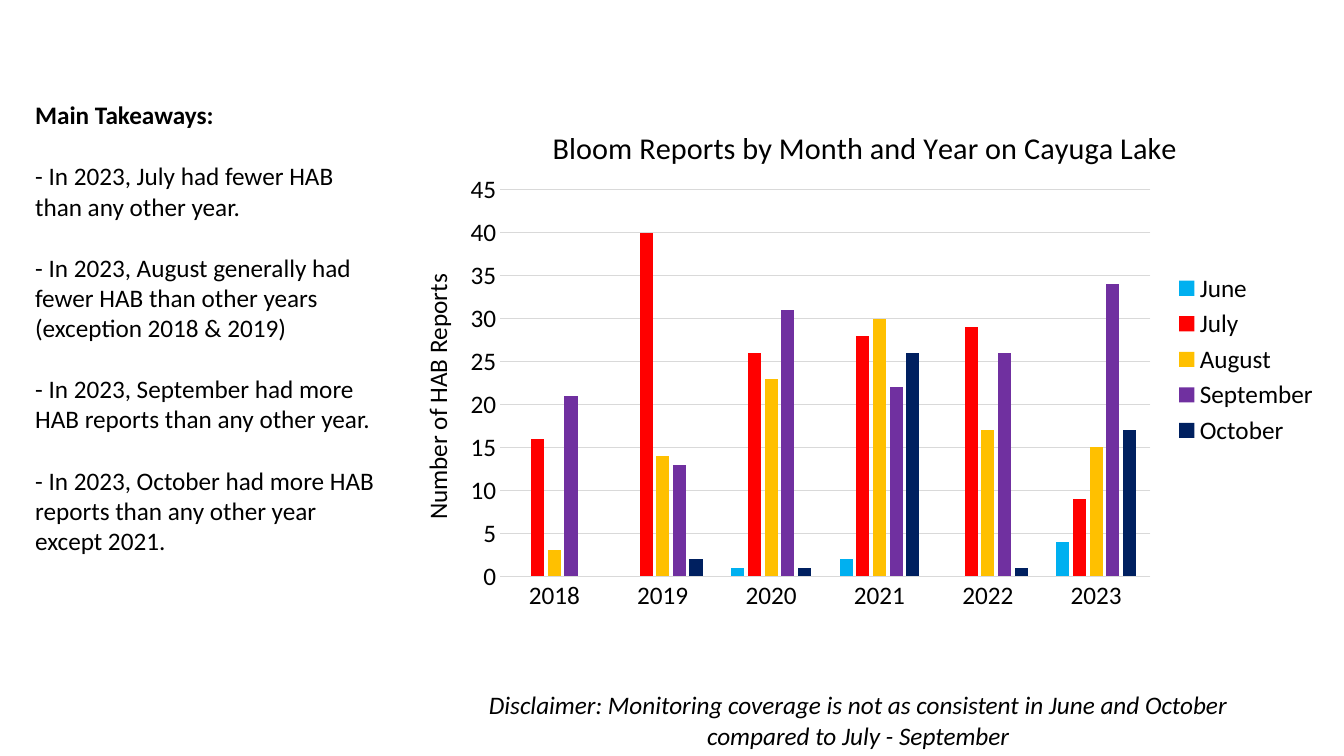
import pptx
import pptx.chart.data
import pptx.dml.color
import pptx.enum.chart
import pptx.enum.text
import pptx.oxml
import pptx.oxml.ns
import pptx.util

Pt = pptx.util.Pt
RGBColor = pptx.dml.color.RGBColor

BLACK = RGBColor(0x00, 0x00, 0x00)
GRID_GREY = RGBColor(0xD9, 0xD9, 0xD9)
JUNE_BLUE = RGBColor(0x00, 0xB0, 0xF0)
JULY_RED = RGBColor(0xFF, 0x00, 0x00)
AUGUST_GOLD = RGBColor(0xFF, 0xC0, 0x00)
SEPTEMBER_PURPLE = RGBColor(0x70, 0x30, 0xA0)
OCTOBER_NAVY = RGBColor(0x00, 0x20, 0x60)

YEARS = ["2018", "2019", "2020", "2021", "2022", "2023"]
MONTHS = [
    ("June", [None, None, 1, 2, None, 4], JUNE_BLUE),
    ("July", [16, 40, 26, 28, 29, 9], JULY_RED),
    ("August", [3, 14, 23, 30, 17, 15], AUGUST_GOLD),
    ("September", [21, 13, 31, 22, 26, 34], SEPTEMBER_PURPLE),
    ("October", [None, 2, 1, 26, 1, 17], OCTOBER_NAVY),
]
TAKEAWAYS = [
    "Main Takeaways:",
    "- In 2023, July had fewer HAB than any other year.",
    "- In 2023, August generally had fewer HAB than other years (exception 2018 & 2019)",
    "- In 2023, September had more HAB reports than any other year.",
    "- In 2023, October had more HAB reports than any other year except 2021.",
]
DISCLAIMER = (
    "Disclaimer: Monitoring coverage is not as consistent in June and October "
    "compared to July - September"
)


def add_span(para, text, size=18, bold=False, italic=False):
    span = para.add_run()
    span.text = text
    span.font.name = "Calibri"
    span.font.size = Pt(size)
    span.font.bold = bold
    span.font.italic = italic
    span.font.color.rgb = BLACK


def set_layout(element, index, target=None, **fractions):
    for old in element.findall(pptx.oxml.ns.qn("c:layout")):
        element.remove(old)
    parts = f'<c:layoutTarget val="{target}"/>' if target else ""
    parts += '<c:xMode val="edge"/><c:yMode val="edge"/>'
    parts += "".join(f'<c:{key} val="{value}"/>' for key, value in fractions.items())
    layout = pptx.oxml.parse_xml(
        f'<c:layout {pptx.oxml.ns.nsdecls("c")}>'
        f"<c:manualLayout>{parts}</c:manualLayout></c:layout>"
    )
    element.insert(index, layout)


deck = pptx.Presentation()
deck.slide_width = Pt(960)
deck.slide_height = Pt(540)
page = deck.slides.add_slide(deck.slide_layouts[6])

data = pptx.chart.data.CategoryChartData()
data.categories = YEARS
for month, reports, color in MONTHS:
    data.add_series(month, reports)

chart = page.shapes.add_chart(
    pptx.enum.chart.XL_CHART_TYPE.COLUMN_CLUSTERED,
    Pt(276.5), Pt(67.7), Pt(673.2), Pt(378), data,
).chart
chart.font.name = "Calibri"
chart.font.size = Pt(18)
chart.font.color.rgb = BLACK

plot = chart.plots[0]
plot.gap_width = 219
plot.overlap = -27
plot.vary_by_categories = False
for series, (month, reports, color) in zip(plot.series, MONTHS):
    series.format.fill.solid()
    series.format.fill.fore_color.rgb = color

year_axis = chart.category_axis
count_axis = chart.value_axis
for axis in (year_axis, count_axis):
    axis.major_tick_mark = pptx.enum.chart.XL_TICK_MARK.NONE
    axis.minor_tick_mark = pptx.enum.chart.XL_TICK_MARK.NONE
count_axis.minimum_scale = 0
count_axis.maximum_scale = 45
count_axis.major_unit = 5
count_axis.has_major_gridlines = True
count_axis.format.line.fill.background()
for line in (year_axis.format.line, count_axis.major_gridlines.format.line):
    line.color.rgb = GRID_GREY
    line.width = Pt(0.75)

chart.has_title = True
count_axis.has_title = True
for title, text, size, left, top in (
    (chart.chart_title, "Bloom Reports by Month and Year on Cayuga Lake", 21.6, 0.17, 0.05),
    (count_axis.axis_title, "Number of HAB Reports", 18, 0.03, 0.33),
):
    add_span(title.text_frame.paragraphs[0], text, size)
    set_layout(title._element, 1, x=left, y=top)
set_layout(chart._chartSpace.chart.plotArea, 0, "inner", x=0.12, y=0.18, w=0.69, h=0.73)

chart.has_legend = True
chart.legend.position = pptx.enum.chart.XL_LEGEND_POSITION.RIGHT
chart.legend.include_in_layout = False

takeaway_box = page.shapes.add_textbox(Pt(18), Pt(67.7), Pt(258.5), Pt(334))
takeaway_box.text_frame.word_wrap = True
for number, text in enumerate(TAKEAWAYS):
    frame = takeaway_box.text_frame
    para = frame.add_paragraph() if number else frame.paragraphs[0]
    para.space_before = Pt(22 if number else 0)
    add_span(para, text, bold=number == 0)

disclaimer_box = page.shapes.add_textbox(Pt(337), Pt(489), Pt(552), Pt(51))
disclaimer_box.text_frame.word_wrap = True
para = disclaimer_box.text_frame.paragraphs[0]
para.alignment = pptx.enum.text.PP_ALIGN.CENTER
add_span(para, DISCLAIMER, italic=True)

deck.save("out.pptx")
